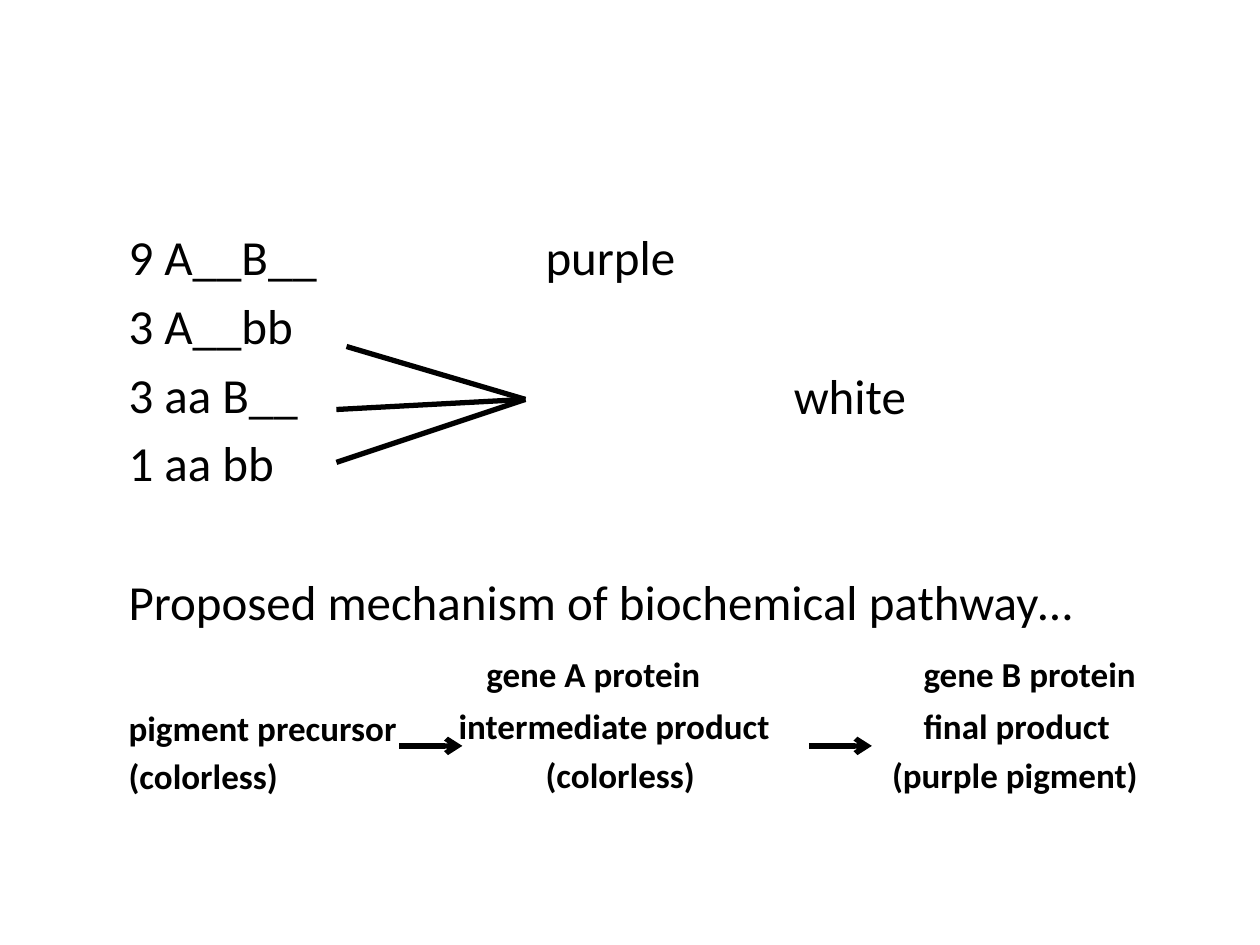
from lxml import etree
from pptx import Presentation
from pptx.dml.color import RGBColor
from pptx.enum.shapes import MSO_CONNECTOR
from pptx.enum.text import MSO_AUTO_SIZE, MSO_ANCHOR
from pptx.oxml.ns import qn
from pptx.util import Inches, Pt

STRAIGHT = MSO_CONNECTOR.STRAIGHT
NO_AUTOFIT = MSO_AUTO_SIZE.NONE
TOP = MSO_ANCHOR.TOP
BLACK = RGBColor.from_string("000000")
LARGE, SMALL = 28, 20


def add_text(paragraph, text, size):
    run = paragraph.add_run()
    run.text = text
    run.font.name = "Calibri"
    run.font.size = Pt(size)
    run.font.bold = size == SMALL
    run.font.color.rgb = BLACK


def add_line(start, end, arrow=False):
    line = slide.shapes.add_connector(
        STRAIGHT, *[Inches(value) for value in start + end])
    line.line.color.rgb = BLACK
    line.line.width = Pt(3)
    if arrow:
        outline = line.line._get_or_add_ln()
        etree.SubElement(outline, qn("a:tailEnd"), type="arrow")
    etree.SubElement(line._element.spPr, qn("a:effectLst"))


prs = Presentation()
prs.slide_width, prs.slide_height = Inches(10), Inches(7.5)
slide = prs.slides.add_slide(prs.slide_layouts[1])
title = slide.shapes.title
title._element.getparent().remove(title._element)

# Body: genotype ratios and the start of the pathway
body = slide.placeholders[1]
body.left, body.top = Inches(0.42), Inches(1.75)
body.width, body.height = Inches(9.17), Inches(5.33)
frame = body.text_frame
frame.word_wrap = True
frame.auto_size = NO_AUTOFIT
frame.vertical_anchor = TOP
frame.margin_left = Inches(0.6)

# Text, size and space before, both in points
rows = [
    ("9 A__B__", LARGE, 5.6),
    ("3 A__bb", LARGE, 5.6),
    ("3 aa B__", LARGE, 5.6),
    ("1 aa bb", LARGE, 5.6),
    ("Proposed mechanism of biochemical pathway…", LARGE, 45.4),
    ("pigment precursor", SMALL, 43.5),
    ("(colorless)", SMALL, 3.6),
]
for index, (text, size, space_before) in enumerate(rows):
    paragraph = frame.paragraphs[0] if index == 0 else frame.add_paragraph()
    paragraph.level = 1
    paragraph.space_before = Pt(space_before)
    properties = paragraph._p.get_or_add_pPr()
    properties.set("marL", "0")
    properties.set("indent", "0")
    etree.SubElement(properties, qn("a:buNone"))
    add_text(paragraph, text, size)

# Phenotypes and the later pathway steps: left, top, text, size
labels = [
    (4.33, 1.8, "purple", LARGE),
    (6.3, 2.9, "white", LARGE),
    (3.86, 5.18, "gene A protein", SMALL),
    (7.33, 5.18, "gene B protein", SMALL),
    (3.64, 5.59, "intermediate product", SMALL),
    (7.33, 5.59, "final product", SMALL),
    (4.33, 5.98, "(colorless)", SMALL),
    (7.08, 5.98, "(purple pigment)", SMALL),
]
for left, top, text, size in labels:
    label = slide.shapes.add_textbox(
        Inches(left), Inches(top), Inches(2.5), Inches(size / 60)).text_frame
    label.word_wrap = True
    label.margin_left = label.margin_right = 0
    label.margin_top = label.margin_bottom = 0
    add_text(label.paragraphs[0], text, size)

# Three genotypes converge on the white phenotype
for genotype in [(2.75, 2.75), (2.67, 3.67), (2.67, 3.25)]:
    add_line(genotype, (4.17, 3.17))

# Pathway arrows
for arrow_left in (3.17, 6.42):
    add_line((arrow_left, 5.92), (arrow_left + 0.5, 5.92), arrow=True)

prs.save("out.pptx")
